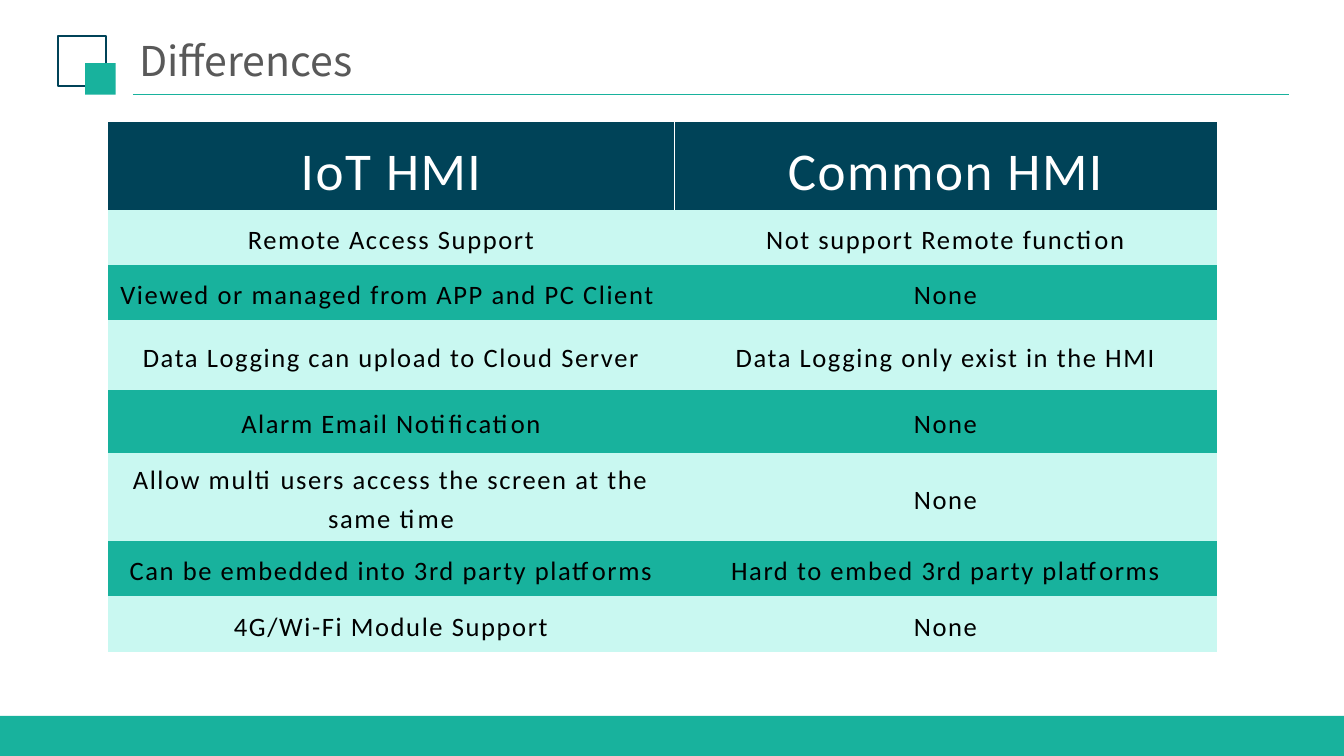
from lxml import etree
from pptx import Presentation
from pptx import util as u
from pptx.dml.color import RGBColor
from pptx.enum import shapes, text
from pptx.oxml import ns

TEAL, NAVY, MINT = "18B29D", "004358", "C9F8F1"
WHITE, BLACK, GREY = "FFFFFF", "000000", "595959"
PLAIN_TABLE_STYLE = "{2D5ABB26-0587-4C30-8999-92F81FD0307C}"
COLUMN_WIDTHS = (5.92, 5.68)
ROW_HEIGHTS = (0.9, 0.58, 0.58, 0.73, 0.66, 0.9, 0.58, 0.58)
COMPARISON = (
    ("IoT HMI", "Common HMI"),
    ("Remote Access Support", "Not support Remote function"),
    ("Viewed or managed from APP and PC Client ", "None"),
    ("Data Logging can upload to Cloud Server", "Data Logging only exist in the HMI"),
    ("Alarm Email Notification", "None"),
    ("Allow multi users access the screen at the same time", "None"),
    ("Can be embedded into 3rd party platforms", "Hard to embed 3rd party platforms"),
    ("4G/Wi-Fi Module Support", "None"),
)


def paint(color_format, color):
    """Apply a hex colour to a fill or font colour."""
    color_format.rgb = RGBColor.from_string(color)


def set_font(paragraph, name, size, color):
    """Set the font of a whole paragraph."""
    font = paragraph.font
    font.name, font.size, font.bold = name, u.Pt(size), False
    paint(font.color, color)


def add_rectangle(page, left, top, width, height, fill=None, line=None):
    """Add a rectangle that is either filled or outlined."""
    box = page.shapes.add_shape(
        shapes.MSO_SHAPE.RECTANGLE,
        u.Inches(left), u.Inches(top), u.Inches(width), u.Inches(height),
    )
    box.shadow.inherit = False
    if fill:
        box.fill.solid()
        paint(box.fill.fore_color, fill)
    else:
        box.fill.background()
    if line:
        paint(box.line.color, line)
        box.line.width = u.Pt(1.5)
    else:
        box.line.fill.background()


def add_rule(page, left, right, top):
    """Add the horizontal rule under the title."""
    rule = page.shapes.add_connector(
        shapes.MSO_CONNECTOR.STRAIGHT,
        u.Inches(left), u.Inches(top), u.Inches(right), u.Inches(top),
    )
    paint(rule.line.color, TEAL)
    rule.line.width = u.Pt(1.25)
    etree.SubElement(rule._element.spPr, ns.qn("a:effectLst"))


def add_title(page, words):
    """Place and format the title placeholder."""
    title = page.shapes.title
    title.left, title.top = u.Inches(1.39), u.Inches(0.41)
    title.width, title.height = u.Inches(9.07), u.Inches(0.51)
    frame = title.text_frame
    frame.text = words
    frame.auto_size = text.MSO_AUTO_SIZE.NONE
    frame.vertical_anchor = text.MSO_ANCHOR.MIDDLE
    frame.margin_left = frame.margin_right = u.Inches(0.07)
    frame.margin_top = frame.margin_bottom = u.Inches(0.04)
    para = frame.paragraphs[0]
    para.alignment = text.PP_ALIGN.LEFT
    para.line_spacing = 0.9
    set_font(para, "Noto Sans CJK SC", 30.9, GREY)


def add_border(cell, side):
    """Draw a thin white border on one side of a cell."""
    border = etree.Element(ns.qn(f"a:{side}"), w=str(u.Pt(0.5)))
    fill = etree.SubElement(border, ns.qn("a:solidFill"))
    etree.SubElement(fill, ns.qn("a:srgbClr"), val=WHITE)
    cell._tc.get_or_add_tcPr().insert(0, border)


def fill_cell(cell, words, size, color, fill):
    """Write centred, letter-spaced text in a coloured cell."""
    cell.text = words
    cell.vertical_anchor = text.MSO_ANCHOR.MIDDLE
    cell.fill.solid()
    paint(cell.fill.fore_color, fill)
    para = cell.text_frame.paragraphs[0]
    para.alignment = text.PP_ALIGN.CENTER
    para.line_spacing = 1.2
    set_font(para, "Calibri", size, color)
    para.runs[0]._r.get_or_add_rPr().set("spc", "120")


def add_comparison(page):
    """Add the table that compares the two kinds of HMI."""
    table = page.shapes.add_table(
        len(ROW_HEIGHTS), len(COLUMN_WIDTHS), u.Inches(1.13), u.Inches(1.28),
        u.Inches(sum(COLUMN_WIDTHS)), u.Inches(sum(ROW_HEIGHTS)),
    ).table
    table.first_row = table.horz_banding = False
    table._tbl.tblPr.find(ns.qn("a:tableStyleId")).text = PLAIN_TABLE_STYLE
    for column, width in zip(table.columns, COLUMN_WIDTHS):
        column.width = u.Inches(width)
    for row, height in zip(table.rows, ROW_HEIGHTS):
        row.height = u.Inches(height)
    for row_number, entries in enumerate(COMPARISON):
        if row_number == 0:
            look = (40, WHITE, NAVY)
        else:
            look = (20, BLACK, MINT if row_number % 2 else TEAL)
        for column_number, words in enumerate(entries):
            fill_cell(table.cell(row_number, column_number), words, *look)
    add_border(table.cell(0, 0), "lnR")
    add_border(table.cell(0, 1), "lnL")


def main():
    """Build the slide and save the deck."""
    deck = Presentation()
    deck.slide_width, deck.slide_height = u.Inches(14.06), u.Inches(7.91)
    page = deck.slides.add_slide(deck.slide_layouts.get_by_name("Title Only"))
    add_rule(page, 1.39, 13.48, 0.99)
    add_rectangle(page, 0.61, 0.38, 0.5, 0.52, line=NAVY)
    add_rectangle(page, 0.89, 0.66, 0.32, 0.33, fill=TEAL)
    add_rectangle(page, 0, 7.49, 14.06, 0.42, fill=TEAL)
    add_title(page, "Differences")
    add_comparison(page)
    deck.save("out.pptx")


if __name__ == "__main__":
    main()
